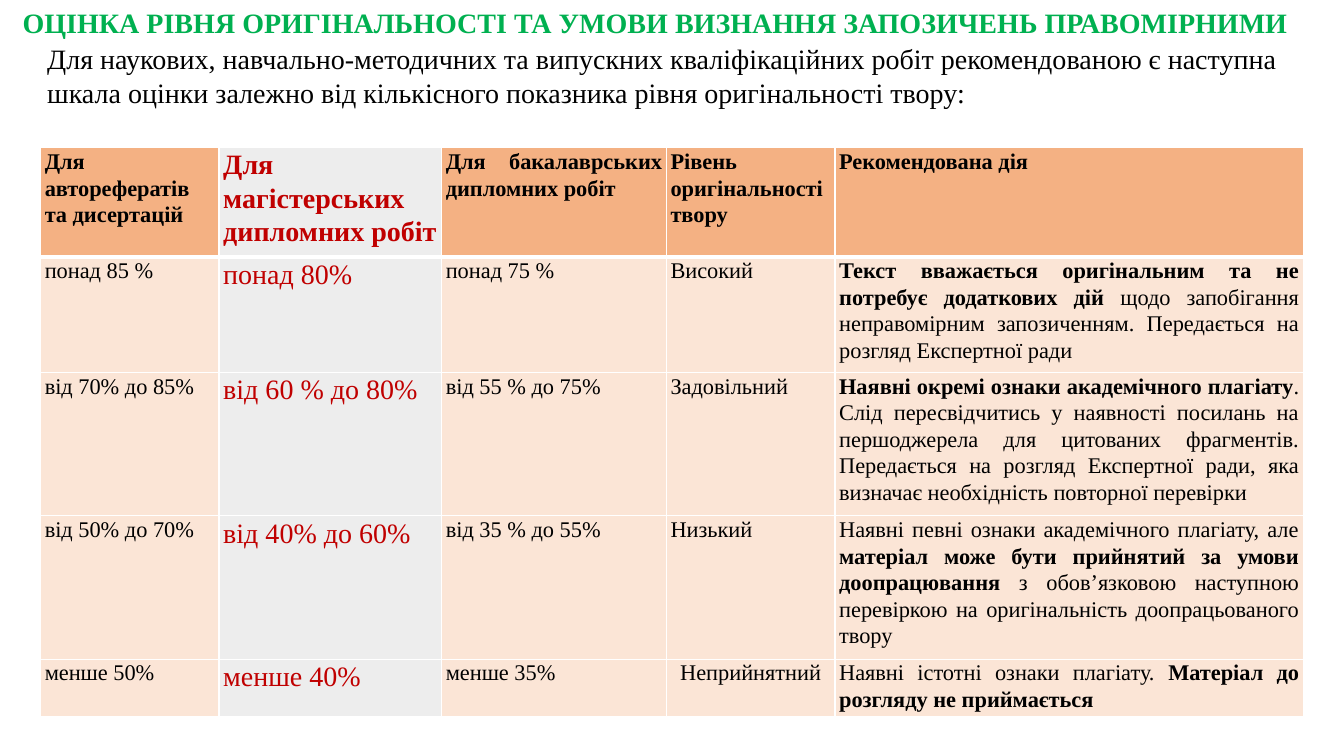
import pptx
import pptx.util
import pptx.dml.color
import pptx.enum.text
import pptx.oxml
import pptx.oxml.ns

Pt = pptx.util.Pt
RGBColor = pptx.dml.color.RGBColor
Align = pptx.enum.text.PP_ALIGN
Anchor = pptx.enum.text.MSO_ANCHOR

GREEN = RGBColor(0x00, 0xB0, 0x50)
BLACK = RGBColor(0x00, 0x00, 0x00)
RED = RGBColor(0xC0, 0x00, 0x00)
WHITE = RGBColor(0xFF, 0xFF, 0xFF)
ORANGE = RGBColor(0xF4, 0xB1, 0x83)
PEACH = RGBColor(0xFB, 0xE5, 0xD6)
GREY = RGBColor(0xED, 0xED, 0xED)
FONT = "Times New Roman"

HEADING = "ОЦІНКА РІВНЯ ОРИГІНАЛЬНОСТІ ТА УМОВИ ВИЗНАННЯ ЗАПОЗИЧЕНЬ ПРАВОМІРНИМИ"
INTRO = (
    "Для наукових, навчально-методичних та випускних кваліфікаційних робіт рекомендованою "
    "є наступна шкала оцінки залежно від кількісного показника рівня оригінальності твору:"
)
COLUMN_WIDTHS = [127.5, 159, 160.5, 120.5, 334.5]
ROW_HEIGHTS = [78, 82.5, 102.5, 102.5, 41]
MASTERS_COLUMN = 1
HEADERS = [
    "Для авторефератів та дисертацій ",
    "Для магістерських дипломних робіт",
    "Для бакалаврських дипломних робіт",
    "Рівень оригінальності твору",
    "Рекомендована дія",
]
LEVELS = [
    ["понад 85 % ", "понад 80%", "понад 75 %", "Високий"],
    ["від 70% до 85% ", "від 60 % до 80%", "від 55 % до 75%", "Задовільний"],
    ["від 50% до 70% ", "від 40% до 60%", "від 35 % до 55%", "Низький"],
    ["менше 50% ", "менше 40%", "менше 35%", "Неприйнятний"],
]
ACTIONS = [
    [
        ("Текст вважається оригінальним та не потребує додаткових дій ", True),
        ("щодо запобігання неправомірним запозиченням. Передається на розгляд Експертної ради", False),
    ],
    [
        ("Наявні окремі ознаки академічного плагіату", True),
        (
            ". Слід пересвідчитись у наявності посилань на першоджерела для цитованих фрагментів. "
            "Передається на розгляд Експертної ради, яка визначає необхідність повторної перевірки",
            False,
        ),
    ],
    [
        ("Наявні певні ознаки академічного плагіату, але ", False),
        ("матеріал може бути прийнятий за умови доопрацювання ", True),
        ("з обов’язковою наступною перевіркою на оригінальність доопрацьованого твору", False),
    ],
    [
        ("Наявні істотні ознаки плагіату. ", False),
        ("Матеріал до розгляду не приймається", True),
    ],
]


def add_run(paragraph, wording, size, color, bold):
    run = paragraph.add_run()
    run.text = wording
    run.font.name = FONT
    run.font.size = Pt(size)
    run.font.color.rgb = color
    run.font.bold = bold


def fill_placeholder(placeholder, box, wording, color, bold, alignment):
    placeholder.left, placeholder.top, placeholder.width, placeholder.height = map(Pt, box)
    frame = placeholder.text_frame
    frame.word_wrap = True
    frame.auto_size = pptx.enum.text.MSO_AUTO_SIZE.NONE
    frame.vertical_anchor = Anchor.TOP
    paragraph = frame.paragraphs[0]
    paragraph.alignment = alignment
    paragraph.space_before = Pt(0)
    add_run(paragraph, wording, 20, color, bold)
    return paragraph


def place_heading(slide, box):
    fill_placeholder(slide.shapes.title, box, HEADING, GREEN, True, Align.CENTER)


def place_intro(slide, box):
    paragraph = fill_placeholder(slide.placeholders[1], box, INTRO, BLACK, False, Align.LEFT)
    properties = paragraph._p.get_or_add_pPr()
    properties.set("marL", "0")
    properties.set("indent", "0")
    properties.append(pptx.oxml.parse_xml(f'<a:buNone {pptx.oxml.ns.nsdecls("a")}/>'))


def draw_borders(cell, bottom_width):
    properties = cell._tc.get_or_add_tcPr()
    widths = {"lnL": 1, "lnR": 1, "lnT": 1, "lnB": bottom_width}
    for position, (side, width) in enumerate(widths.items()):
        border = pptx.oxml.parse_xml(
            f'<a:{side} {pptx.oxml.ns.nsdecls("a")} w="{Pt(width)}">'
            f'<a:solidFill><a:srgbClr val="{WHITE}"/></a:solidFill></a:{side}>'
        )
        properties.insert(position, border)


def fill_cell(cell, phrases, is_header, is_masters, alignment):
    cell.margin_left = cell.margin_right = Pt(3)
    cell.margin_top = cell.margin_bottom = Pt(0)
    cell.vertical_anchor = Anchor.TOP
    cell.fill.solid()
    cell.fill.fore_color.rgb = GREY if is_masters else ORANGE if is_header else PEACH
    draw_borders(cell, 3 if is_header else 1)
    paragraph = cell.text_frame.paragraphs[0]
    paragraph.alignment = alignment
    paragraph.line_spacing = 1.07
    paragraph.space_after = Pt(1.2)
    for wording, bold in phrases:
        add_run(paragraph, wording, 20 if is_masters else 16, RED if is_masters else BLACK, bold)


def place_scale(slide, box):
    rows = [[[(header, True)] for header in HEADERS]]
    for levels, action in zip(LEVELS, ACTIONS):
        rows.append([[(level, False)] for level in levels] + [action])
    scale = slide.shapes.add_table(len(rows), len(HEADERS), *map(Pt, box)).table
    scale.horz_banding = False
    for column, width in zip(scale.columns, COLUMN_WIDTHS):
        column.width = Pt(width)
    for row, height in zip(scale.rows, ROW_HEIGHTS):
        row.height = Pt(height)
    for r, row in enumerate(rows):
        for c, phrases in enumerate(row):
            centred = phrases[0][0] == "Неприйнятний"
            alignment = Align.CENTER if centred else Align.JUSTIFY
            fill_cell(scale.cell(r, c), phrases, r == 0, c == MASTERS_COLUMN, alignment)


def main():
    deck = pptx.Presentation()
    deck.slide_width, deck.slide_height = Pt(960), Pt(540)
    slide = deck.slides.add_slide(deck.slide_layouts[1])
    place_intro(slide, (26.5, 26, 906.5, 55.5))
    place_heading(slide, (0, 0, 936, 31.5))
    place_scale(slide, (29, 105.5, sum(COLUMN_WIDTHS), sum(ROW_HEIGHTS)))
    deck.save("out.pptx")


if __name__ == "__main__":
    main()
